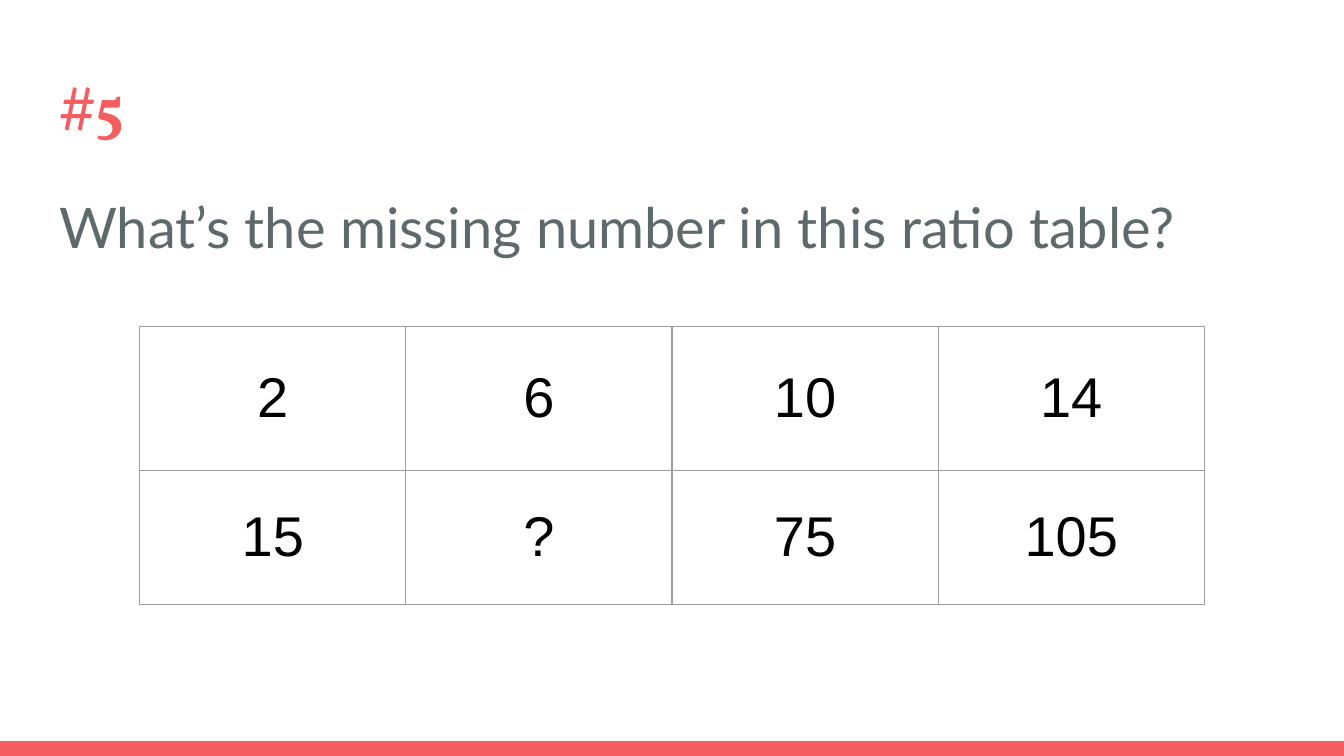
from dataclasses import dataclass

from lxml import etree
from pptx import Presentation
from pptx.dml.color import RGBColor
from pptx.enum.shapes import MSO_SHAPE
from pptx.enum.text import MSO_ANCHOR, MSO_AUTO_SIZE, PP_ALIGN
from pptx.oxml.ns import qn
from pptx.util import Cm, Pt

RECT = MSO_SHAPE.RECTANGLE
TOP, MIDDLE = MSO_ANCHOR.TOP, MSO_ANCHOR.MIDDLE
LEFT, CENTER = PP_ALIGN.LEFT, PP_ALIGN.CENTER
NO_FIT = MSO_AUTO_SIZE.NONE


@dataclass(frozen=True)
class Style:
    font: str
    size: int
    color: str
    bold: bool = False


@dataclass(frozen=True)
class Theme:
    accent: str = "F55E61"
    border: str = "9E9E9E"
    line: float = 0.75
    inset: float = 0.25
    title: Style = Style("Vollkorn", 32, "F55E61", True)
    body: Style = Style("Lato", 30, "5E696C")
    cell: Style = Style("Arial", 30, "000000")


THEME = Theme()
WIDTH, HEIGHT = 25.4, 14.29
RATIOS = [["2", "6", "10", "14"],
          ["15", "?", "75", "105"]]


def set_text(frame, text, style, align):
    frame.text = text
    para = frame.paragraphs[0]
    para.alignment = align
    font = para.runs[0].font
    font.name, font.size, font.bold = style.font, Pt(style.size), style.bold
    font.color.rgb = RGBColor.from_string(style.color)
    return para


def set_inset(part):
    part.margin_left = part.margin_right = Cm(THEME.inset)
    part.margin_top = part.margin_bottom = Cm(THEME.inset)


def fill_holder(holder, top, height, text, style, spacing):
    holder.left, holder.top = Cm(0.87), Cm(top)
    holder.width, holder.height = Cm(23.67), Cm(height)
    frame = holder.text_frame
    para = set_text(frame, text, style, LEFT)
    set_inset(frame)
    frame.vertical_anchor = TOP
    frame.word_wrap = True
    frame.auto_size = NO_FIT
    para.line_spacing = spacing
    para.space_before = Pt(0)
    # Plain paragraph without bullet or indent
    props = para._p.get_or_add_pPr()
    props.set("marL", "0")
    props.set("indent", "0")
    etree.SubElement(props, qn("a:buNone"))


def add_bar(slide, height):
    bar = slide.shapes.add_shape(
        RECT, 0, Cm(HEIGHT - height), Cm(WIDTH), Cm(height))
    bar.shadow.inherit = False
    bar.fill.solid()
    bar.fill.fore_color.rgb = RGBColor.from_string(THEME.accent)
    bar.line.fill.background()


def set_border(cell):
    props = cell._tc.get_or_add_tcPr()
    for side in ("lnL", "lnR", "lnT", "lnB"):
        line = etree.SubElement(props, qn(f"a:{side}"), w=str(Pt(THEME.line)))
        fill = etree.SubElement(line, qn("a:solidFill"))
        etree.SubElement(fill, qn("a:srgbClr"), val=THEME.border)


def add_grid(slide, rows, left, top, width, heights):
    count = len(rows[0])
    table = slide.shapes.add_table(
        len(rows), count, Cm(left), Cm(top),
        Cm(width), Cm(sum(heights))).table
    table.first_row = table.horz_banding = False
    for col in table.columns:
        col.width = Cm(width / count)
    for r, (row, height) in enumerate(zip(rows, heights)):
        table.rows[r].height = Cm(height)
        for c, text in enumerate(row):
            cell = table.cell(r, c)
            set_text(cell.text_frame, text, THEME.cell, CENTER)
            set_inset(cell)
            cell.vertical_anchor = MIDDLE
            set_border(cell)
            cell.fill.background()


def main():
    deck = Presentation()
    deck.slide_width, deck.slide_height = Cm(WIDTH), Cm(HEIGHT)
    slide = deck.slides.add_slide(deck.slide_layouts[1])

    # Footer bar
    add_bar(slide, 0.28)

    # Question number and question
    fill_holder(slide.shapes.title, 1.09, 1.73, "#5", THEME.title, 1)
    fill_holder(slide.placeholders[1], 3.2, 9.5,
                "What’s the missing number in this ratio table?",
                THEME.body, 1.15)

    # Ratio table
    add_grid(slide, RATIOS, 2.64, 6.17, 20.12, [2.72, 2.54])

    deck.save("out.pptx")


if __name__ == "__main__":
    main()
